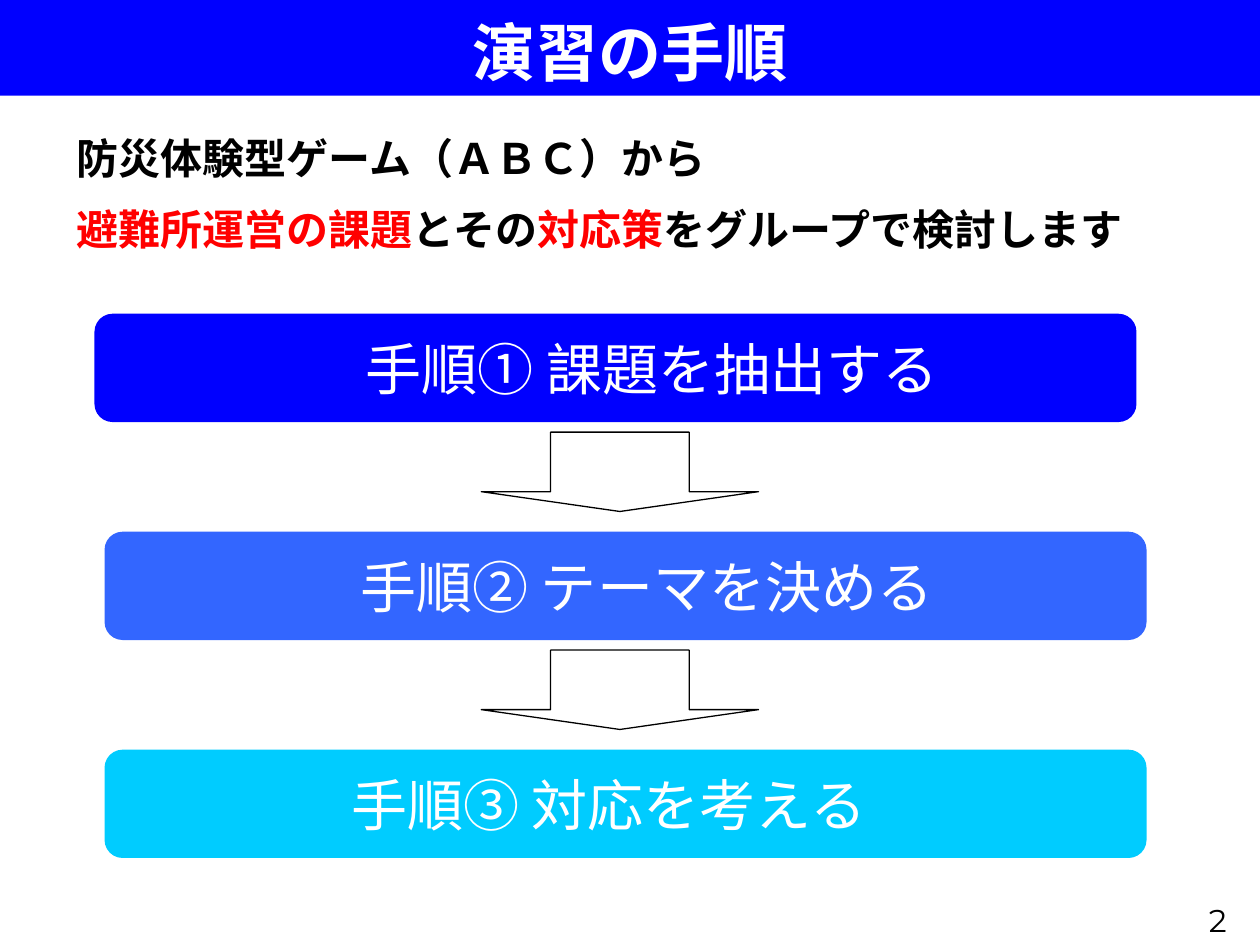
from dataclasses import dataclass

from pptx import Presentation
from pptx.dml.color import RGBColor
from pptx.enum.shapes import MSO_SHAPE
from pptx.enum.text import MSO_ANCHOR, MSO_AUTO_SIZE, PP_ALIGN
from pptx.util import Inches, Pt

ROUNDED_BAR = MSO_SHAPE.FLOWCHART_ALTERNATE_PROCESS
DOWN_ARROW = MSO_SHAPE.DOWN_ARROW
TOP, MIDDLE, BOTTOM = MSO_ANCHOR.TOP, MSO_ANCHOR.MIDDLE, MSO_ANCHOR.BOTTOM
LEFT, CENTER = PP_ALIGN.LEFT, PP_ALIGN.CENTER
NO_AUTOFIT = MSO_AUTO_SIZE.NONE
TITLE_ONLY = 5


@dataclass(frozen=True)
class Theme:
    blue: RGBColor = RGBColor(0x00, 0x00, 0xFF)
    medium_blue: RGBColor = RGBColor(0x33, 0x66, 0xFF)
    light_blue: RGBColor = RGBColor(0x00, 0xCC, 0xFF)
    red: RGBColor = RGBColor(0xFF, 0x00, 0x00)
    black: RGBColor = RGBColor(0x00, 0x00, 0x00)
    white: RGBColor = RGBColor(0xFF, 0xFF, 0xFF)
    font: str = "Arial"
    number_font: str = "Montserrat"
    title_size: int = 36
    step_size: int = 32
    body_size: int = 24
    number_size: int = 18


THEME = Theme()


def write_text(shape, paragraphs, *, size, font=THEME.font, bold=False,
               align=LEFT, anchor=TOP, space_before=0, shift=0):
    frame = shape.text_frame
    frame.word_wrap = True
    frame.auto_size = NO_AUTOFIT
    frame.vertical_anchor = anchor
    frame.margin_left = Inches(0.1 + max(0, 2 * shift))
    frame.margin_right = Inches(0.1 + max(0, -2 * shift))
    frame.margin_top = frame.margin_bottom = Inches(0.05)
    for index, runs in enumerate(paragraphs):
        paragraph = frame.paragraphs[0] if index == 0 else frame.add_paragraph()
        paragraph.alignment = align
        paragraph.space_before = Pt(space_before)
        for text, color in runs:
            run = paragraph.add_run()
            run.text = text
            run.font.name = font
            run.font.size = Pt(size)
            run.font.bold = bold
            run.font.color.rgb = color


def add_title(slide, box, text):
    title = slide.shapes.title
    title.left, title.top, title.width, title.height = map(Inches, box)
    title.fill.solid()
    title.fill.fore_color.rgb = THEME.blue
    write_text(title, [[(text, THEME.white)]], size=THEME.title_size,
               bold=True, align=CENTER, anchor=BOTTOM)


def add_introduction(slide, box):
    introduction = slide.shapes.add_textbox(*map(Inches, box))
    paragraphs = [
        [("防災体験型ゲーム（ＡＢＣ）から", THEME.black)],
        [("避難所運営の課題", THEME.red), ("とその", THEME.black),
         ("対応策", THEME.red), ("をグループで検討します", THEME.black)],
    ]
    write_text(introduction, paragraphs, size=THEME.body_size, bold=True,
               space_before=12)


def add_step(slide, box, text, color, shift):
    bar = slide.shapes.add_shape(ROUNDED_BAR, *map(Inches, box))
    bar.shadow.inherit = False
    bar.fill.solid()
    bar.fill.fore_color.rgb = color
    bar.line.fill.background()
    write_text(bar, [[(text, THEME.white)]], size=THEME.step_size,
               align=CENTER, anchor=MIDDLE, shift=shift)


def add_arrow(slide, box):
    arrow = slide.shapes.add_shape(DOWN_ARROW, *map(Inches, box))
    arrow.shadow.inherit = False
    arrow.adjustments[0] = 0.5
    arrow.adjustments[1] = 0.25
    arrow.fill.background()
    arrow.line.color.rgb = THEME.black
    arrow.line.width = Pt(0.75)


def add_steps(slide, box):
    left, top, width, height = box
    bar_height, arrow_width, arrow_height = 0.86, 2.2, 0.63
    steps = [
        ("手順① 課題を抽出する", THEME.blue, -0.08, 0.29),
        ("手順② テーマを決める", THEME.medium_blue, 0, 0.17),
        ("手順③ 対応を考える", THEME.light_blue, 0, -0.13),
    ]
    pitch = (height - bar_height) / (len(steps) - 1)
    for index, (text, color, offset, shift) in enumerate(steps):
        bar_top = top + index * pitch
        add_step(slide, (left + offset, bar_top, width, bar_height),
                 text, color, shift)
        if index < len(steps) - 1:
            add_arrow(slide, (left + 2.99, bar_top + bar_height + 0.08,
                              arrow_width, arrow_height))


def add_page_number(slide, box, text):
    number = slide.shapes.add_textbox(*map(Inches, box))
    write_text(number, [[(text, THEME.black)]], size=THEME.number_size,
               font=THEME.number_font, align=CENTER)


def main():
    presentation = Presentation()
    presentation.slide_width = Inches(10)
    presentation.slide_height = Inches(7.5)
    slide = presentation.slides.add_slide(
        presentation.slide_layouts[TITLE_ONLY])
    add_title(slide, (0, 0, 10, 0.76), "演習の手順")
    add_introduction(slide, (0.51, 1, 9.02, 1.1))
    add_steps(slide, (0.83, 2.49, 8.27, 4.32))
    add_page_number(slide, (9.33, 7.1, 0.67, 0.4), "2")
    presentation.save("out.pptx")


if __name__ == "__main__":
    main()
